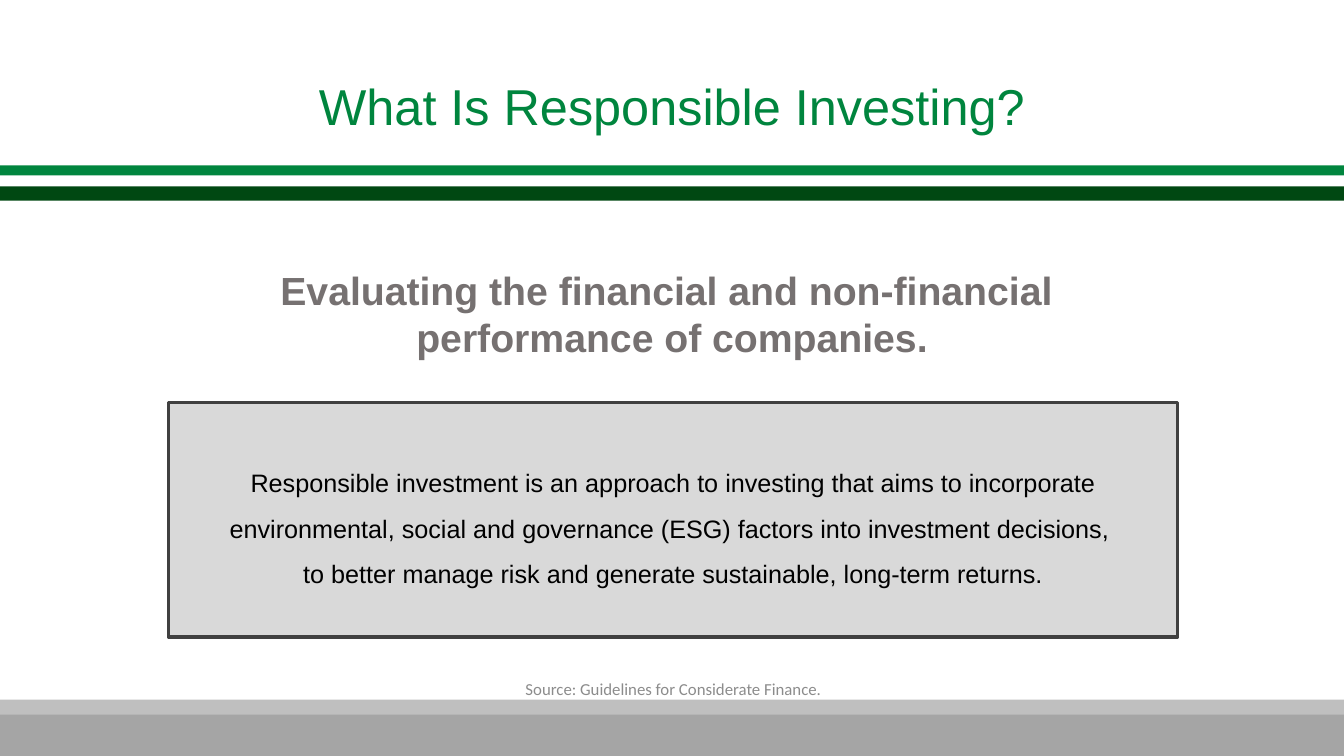
from lxml import etree
from pptx import Presentation
from pptx.dml.color import RGBColor
from pptx.enum.shapes import MSO_SHAPE
from pptx.enum.text import MSO_ANCHOR, MSO_AUTO_SIZE, PP_ALIGN
from pptx.oxml.ns import qn
from pptx.util import Inches, Pt

RECT = MSO_SHAPE.RECTANGLE
TOP, MIDDLE = MSO_ANCHOR.TOP, MSO_ANCHOR.MIDDLE
CENTER = PP_ALIGN.CENTER
FIXED = MSO_AUTO_SIZE.NONE

COLORS = {
    "green": "00853E",
    "forest": "004812",
    "black": "000000",
    "slate": "767171",
    "note": "8C8C8C",
    "panel": "D9D9D9",
    "edge": "404040",
    "silver": "BFBFBF",
    "gray": "A5A5A5",
}

BARS = [
    (0, 7, 13.33, 0.62, "gray"),
    (0, 6.94, 13.33, 0.15, "silver"),
    (-0.03, 1.64, 13.7, 0.1, "green"),
    (-0.08, 1.85, 13.8, 0.14, "forest"),
]


def color(name):
    return RGBColor.from_string(COLORS[name])


def place(shape, *box):
    shape.left, shape.top, shape.width, shape.height = map(Inches, box)


def write(shape, lines, size, tint, font="Arial", bold=False,
          anchor=TOP, space=1.0):
    frame = shape.text_frame
    frame.word_wrap = True
    frame.auto_size = FIXED
    frame.vertical_anchor = anchor
    para = frame.paragraphs[0]
    para.alignment = CENTER
    para.line_spacing = space
    para.space_before = Pt(0)
    for index, line in enumerate(lines):
        if index:
            para.add_line_break()
        run = para.add_run()
        run.text = line
        run.font.name = font
        run.font.size = Pt(size)
        run.font.bold = bold
        run.font.color.rgb = color(tint)
    return para


def add_text(slide, box, *args, **style):
    shape = slide.shapes.add_textbox(*map(Inches, box))
    write(shape, *args, **style)


def add_bar(slide, left, top, width, height, tint):
    bar = slide.shapes.add_shape(RECT, *map(Inches, (left, top, width, height)))
    bar.shadow.inherit = False
    bar.fill.solid()
    bar.fill.fore_color.rgb = color(tint)
    bar.line.fill.background()


def fill_title(slide):
    title = slide.shapes.title
    place(title, 0, 0.64, 13.33, 0.88)
    write(title, ["What Is Responsible Investing?"], 36, "green",
          anchor=MIDDLE, space=0.9)


def fill_panel(slide):
    panel = slide.placeholders[1]
    place(panel, 1.67, 3.99, 10.01, 2.33)
    panel.fill.solid()
    panel.fill.fore_color.rgb = color("panel")
    panel.line.color.rgb = color("edge")
    panel.line.width = Pt(2.25)
    frame = panel.text_frame
    frame.margin_left = frame.margin_right = frame.margin_top = Inches(0.5)
    frame.margin_bottom = Inches(0.2)
    para = write(panel, [
        "Responsible investment is an approach to investing that aims to "
        "incorporate environmental, social and governance (ESG) factors "
        "into investment decisions, ",
        "to better manage risk and generate sustainable, long-term returns.",
    ], 18, "black", space=1.5)
    props = para._p.get_or_add_pPr()
    props.set("marL", "0")
    props.set("indent", "0")
    etree.SubElement(props, qn("a:buNone"))


def main():
    deck = Presentation()
    deck.slide_width, deck.slide_height = Inches(13.33), Inches(7.5)
    slide = deck.slides.add_slide(deck.slide_layouts[1])
    fill_title(slide)
    fill_panel(slide)
    add_text(slide, (0, 2.59, 13.33, 0.49), [
        "Evaluating the financial and non-financial ",
        "performance of companies.",
    ], 28, "slate", bold=True)
    add_text(slide, (0.49, 6.53, 12.38, 0.61),
             ["Source: Guidelines for Considerate Finance."],
             12, "note", font="Calibri", anchor=MIDDLE)
    for bar in BARS:
        add_bar(slide, *bar)
    deck.save("out.pptx")


if __name__ == "__main__":
    main()
